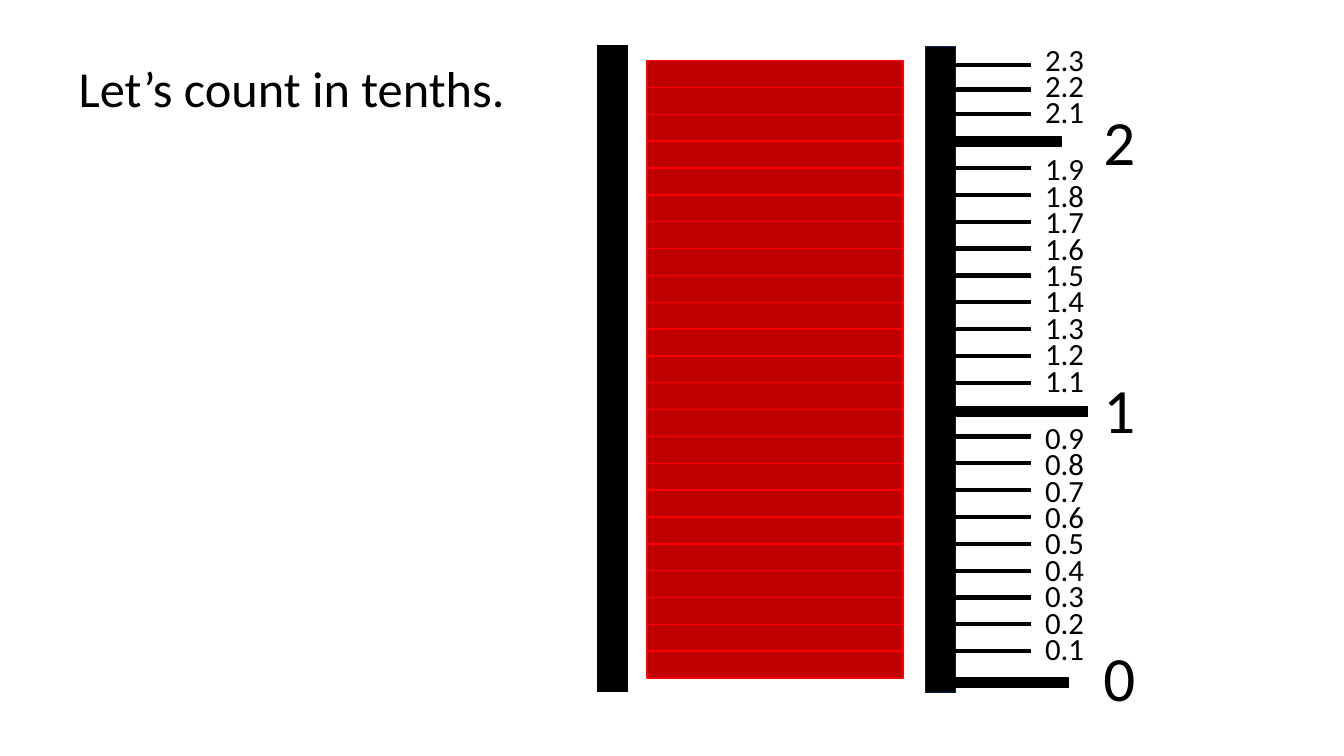
from lxml.etree import SubElement
from pptx import Presentation
from pptx.dml.color import RGBColor
from pptx.enum.shapes import MSO_CONNECTOR, MSO_SHAPE
from pptx.enum.text import MSO_ANCHOR, MSO_AUTO_SIZE, PP_ALIGN
from pptx.oxml.ns import qn
from pptx.util import Cm, Pt

BLACK = RGBColor(0x00, 0x00, 0x00)
NAVY = RGBColor(0x00, 0x20, 0x60)
DARK_RED = RGBColor(0xC0, 0x00, 0x00)
RED = RGBColor(0xFF, 0x00, 0x00)

# Scale, in centimetres
FIRST_TENTH = 16.41
LAST_TENTH = 1.53
TENTHS = 23
STEP = (FIRST_TENTH - LAST_TENTH) / (TENTHS - 1)
TOP_NUDGE = {22: 0.05, 23: 0.1}
# Left, top, width and height of the thick mark at each whole number
WHOLE_MARKS = [
    (23.88, 17.09, 3.05, 0.23),
    (23.9, 10.24, 3.51, 0.25),
    (24.08, 3.45, 2.67, 0.23),
]


class ScaleSlide:
    font = "Calibri"

    def __init__(self, slide):
        self.slide = slide
        self.shapes = slide.shapes

    def start_group(self):
        """Send the elements that follow into a new group."""
        self.shapes = self.slide.shapes.add_group_shape().shapes

    def end_group(self):
        self.shapes = self.slide.shapes

    def set_words(self, holder, words, size):
        frame = holder.text_frame
        frame.text = words
        frame.word_wrap = False
        frame.auto_size = MSO_AUTO_SIZE.SHAPE_TO_FIT_TEXT
        frame.vertical_anchor = MSO_ANCHOR.TOP
        paragraph = frame.paragraphs[0]
        paragraph.alignment = PP_ALIGN.LEFT
        font = paragraph.runs[0].font
        font.name, font.size = self.font, Pt(size)
        font.color.rgb = BLACK

    def title(self, words, left, top, width, height, size):
        heading = self.slide.shapes.title
        heading.left, heading.top = Cm(left), Cm(top)
        heading.width, heading.height = Cm(width), Cm(height)
        self.set_words(heading, words, size)

    def label(self, words, left, top, width, height, size):
        box = self.shapes.add_textbox(Cm(left), Cm(top), Cm(width), Cm(height))
        self.set_words(box, words, size)

    def bar(self, left, top, width, height, fill=BLACK, outline=BLACK):
        block = self.shapes.add_shape(
            MSO_SHAPE.RECTANGLE, Cm(left), Cm(top), Cm(width), Cm(height))
        block.shadow.inherit = False
        block.fill.solid()
        block.fill.fore_color.rgb = fill
        block.line.color.rgb = outline
        block.line.width = Pt(1)

    def tick(self, start, end, height):
        mark = self.shapes.add_connector(
            MSO_CONNECTOR.STRAIGHT, Cm(start), Cm(height), Cm(end), Cm(height))
        mark.line.color.rgb = BLACK
        mark.line.width = Pt(3)
        SubElement(mark._element.spPr, qn("a:effectLst"))


def scale_height(tenth):
    return FIRST_TENTH - (tenth - 1) * STEP


def main():
    deck = Presentation()
    deck.slide_width, deck.slide_height = Cm(33.87), Cm(19.05)
    page = ScaleSlide(deck.slides.add_slide(deck.slide_layouts[5]))

    page.title("Let’s count in tenths.", 1.73, 1.32, 11.28, 1.8, 36)

    for tenth in range(1, TENTHS + 1):
        page.bar(16.31, scale_height(tenth), 6.45, STEP, DARK_RED, RED)

    page.start_group()
    page.bar(15.06, 1.14, 0.76, 16.28)
    page.bar(23.32, 1.17, 0.76, 16.28, outline=NAVY)

    for tenth in range(TENTHS + 1):
        whole, part = divmod(tenth, 10)
        height = scale_height(tenth)
        page.start_group()
        if part == 0:
            page.bar(*WHOLE_MARKS[whole])
            page.label(str(whole), 27.56, height - 1.11, 1.73, 2.18, 45)
        else:
            page.tick(23.37, 25.98, height + TOP_NUDGE.get(tenth, 0))
            label_top = height - 0.66 + 0.01 * (part - 1)
            page.label(f"{whole}.{part}", 26.09, label_top, 1.87, 1.19, 22)
    page.end_group()

    deck.save("out.pptx")


if __name__ == "__main__":
    main()
